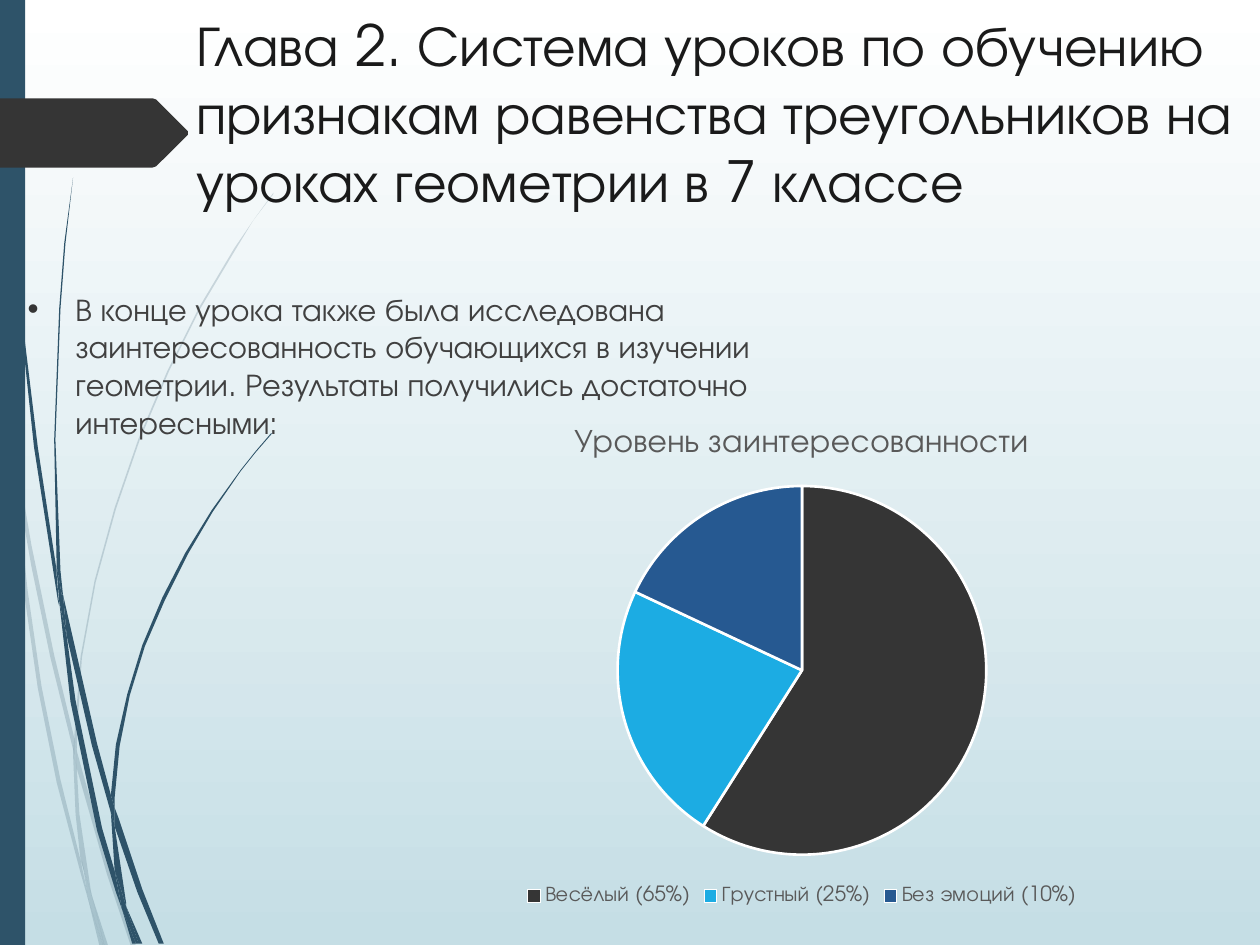
from dataclasses import dataclass

from lxml.etree import SubElement
from pptx import Presentation
from pptx.chart.data import CategoryChartData
from pptx.dml.color import RGBColor
from pptx.enum.chart import XL_CHART_TYPE, XL_LEGEND_POSITION
from pptx.enum.shapes import MSO_SHAPE
from pptx.enum.text import MSO_ANCHOR, PP_ALIGN
from pptx.oxml.ns import qn
from pptx.util import Inches, Pt


@dataclass(frozen=True)
class Theme:
    """Colours and type sizes of the slide."""

    font: str = "TeX Gyre Adventor"
    white: str = "FFFFFF"
    mist: str = "C5DEE5"
    teal: str = "2E5369"
    charcoal: str = "353535"
    title_ink: str = "1A1A1A"
    body_ink: str = "404040"
    chart_ink: str = "595959"
    slices: tuple = ("353535", "1CACE3", "265991")
    title_size: float = 32.4
    body_size: float = 18
    chart_title_size: float = 18.6
    legend_size: float = 12


THEME = Theme()

FAINT_STRANDS = [
    [(.08, 3.5), (.06, 3.22), (0, 2.82), (0, 2.99), (.07, 3.44)],
    [(.4, 5.22), (.59, 5.99), (.59, 5.86), (.43, 5.2), (.25, 4.33), (.1, 3.45), (.12, 3.76), (.25, 4.5)],
    [(.64, 6.07), (.61, 5.96), (.61, 6.1), (.85, 6.94), (1.04, 7.51), (1.08, 7.51), (.88, 6.92)],
    [(.83, 7.51), (.86, 7.51), (.73, 7.11)],
    [(.64, 6.83), (.48, 6.19), (.33, 5.45), (.22, 4.69), (.12, 3.76), (.08, 3.5), (.19, 4.7),
     (.3, 5.46), (.45, 6.21), (.64, 6.93), (.7, 7.14), (.69, 7.07)],
    [(.58, 5.99), (.6, 6.46), (.64, 6.83), (.67, 6.92), (.73, 7.11), (.72, 7.06), (.63, 6.46),
     (.61, 6.1), (.61, 6.08)],
    [(.61, 5.84), (.65, 5.22), (.76, 4.62), (.92, 4.04), (1.11, 3.49), (1.34, 2.95), (1.59, 2.45),
     (1.87, 1.98), (2.01, 1.75), (2.17, 1.54), (2.17, 1.53), (2.01, 1.75), (1.86, 1.97),
     (1.58, 2.44), (1.33, 2.94), (1.1, 3.48), (.91, 4.03), (.75, 4.61), (.64, 5.21), (.59, 5.84),
     (.59, 5.86), (.61, 5.96)],
    [(.7, 7.14), (.79, 7.51), (.82, 7.51)],
    [(.61, 6.08), (.61, 6.1), (.61, 5.96), (.59, 5.86), (.58, 5.99)],
    [(.67, 6.92), (.65, 6.83), (.69, 7.07), (.7, 7.14), (.82, 7.51), (.83, 7.51), (.73, 7.11)],
]

STRONG_STRANDS = [
    [(.05, 1.1), (.14, 2.33), (.27, 3.55), (.46, 4.77), (.47, 4.81), (.45, 4.57), (.45, 4.53),
     (.3, 3.55), (.15, 2.32), (.06, 1.09), (.04, .48), (.03, 0), (.02, 0), (.03, .48)],
    [(.73, 5.92), (.88, 6.45), (.88, 6.33), (.88, 6.31), (.77, 5.9), (.5, 4.72), (.53, 5.05)],
    [(.94, 6.49), (.91, 6.41), (.91, 6.56), (1.09, 7.08), (1.26, 7.49), (1.3, 7.49), (1.13, 7.06)],
    [(.91, 6.91), (.81, 6.57), (.6, 5.56), (.53, 5.05), (.47, 4.77), (.56, 5.57), (.77, 6.59),
     (.92, 7.08), (.97, 7.22), (.96, 7.17)],
    [(.5, 4.72), (.48, 4.53), (.44, 3.49), (.48, 2.45), (.52, 1.93), (.58, 1.41), (.51, 1.93),
     (.47, 2.45), (.43, 3.49), (.45, 4.49), (.49, 4.72)],
    [(1.1, 7.49), (1.13, 7.49), (1, 7.19)],
    [(.47, 4.77), (.53, 5.05), (.5, 4.72), (.49, 4.72), (.45, 4.49), (.45, 4.53)],
    [(.91, 6.33), (.95, 5.92), (1.03, 5.52), (1.15, 5.13), (1.31, 4.76), (1.49, 4.4), (1.69, 4.06),
     (1.91, 3.74), (2.03, 3.59), (2.16, 3.44), (2.15, 3.44), (2.03, 3.58), (1.91, 3.73),
     (1.68, 4.05), (1.47, 4.39), (1.29, 4.74), (1.13, 5.12), (1.01, 5.51), (.92, 5.91),
     (.88, 6.31), (.91, 6.41)],
    [(.97, 7.22), (1.05, 7.49), (1.08, 7.49)],
    [(.88, 6.45), (.91, 6.91), (.96, 7.06), (1, 7.19), (1, 7.16), (.91, 6.56), (.9, 6.51)],
    [(.88, 6.45), (.9, 6.51), (.91, 6.56), (.91, 6.41), (.88, 6.31), (.88, 6.33)],
    [(.96, 7.06), (.91, 6.91), (.96, 7.17), (.97, 7.22), (1.08, 7.49), (1.1, 7.49), (1, 7.19)],
]

ARROW_OUTLINE = [(0, 0), (1.21, 0), (1.24, .01), (1.49, .26), (1.49, .29), (1.24, .54),
                 (1.21, .55), (0, .55)]


def color(value):
    """Turn a hex string into a colour."""
    return RGBColor.from_string(value)


def style_font(font, size, ink):
    """Set the theme typeface, a size and a colour on a font."""
    font.name = THEME.font
    font.size = Pt(size)
    font.bold = False
    font.color.rgb = color(ink)


def paint(shape, fill, opacity=100):
    """Give a shape a flat fill without outline or shadow."""
    shape.shadow.inherit = False
    shape.line.fill.background()
    shape.fill.solid()
    shape.fill.fore_color.rgb = color(fill)
    if opacity < 100:
        tint = shape._element.spPr.find(qn("a:solidFill")).find(qn("a:srgbClr"))
        SubElement(tint, qn("a:alpha")).set("val", str(opacity * 1000))


def add_outline(shapes, left, top, points, fill, opacity=100):
    """Draw a closed outline whose points count in inches from a corner."""
    start, *rest = [(left + Inches(x), top + Inches(y)) for x, y in points]
    builder = shapes.build_freeform(*start)
    builder.add_line_segments(rest, close=True)
    paint(builder.convert_to_shape(), fill, opacity)


def add_background(slide):
    """Fill the slide with a gradient from white down to mist."""
    fill = slide.background.fill
    fill.gradient()
    fill.gradient_angle = 270
    for stop, position, value in zip(fill.gradient_stops, (0, 1), (THEME.white, THEME.mist)):
        stop.position = position
        stop.color.rgb = color(value)


def add_side_decoration(slide, left, top, width, height):
    """Place the grass strands, the side bar and the arrow tab."""
    for strands, opacity in ((FAINT_STRANDS, 20), (STRONG_STRANDS, 100)):
        group = slide.shapes.add_group_shape()
        for points in strands:
            add_outline(group.shapes, left, top, points, THEME.teal, opacity)
    bar = slide.shapes.add_shape(MSO_SHAPE.RECTANGLE, left, top, width, height)
    paint(bar, THEME.teal)
    add_outline(slide.shapes, left, top + Inches(0.78), ARROW_OUTLINE, THEME.charcoal)


def add_text(slide, left, top, width, height, text, size, ink):
    """Place a wrapped paragraph at the top of its box and return it."""
    frame = slide.shapes.add_textbox(left, top, width, height).text_frame
    frame.word_wrap = True
    frame.vertical_anchor = MSO_ANCHOR.TOP
    paragraph = frame.paragraphs[0]
    paragraph.text = text
    paragraph.alignment = PP_ALIGN.LEFT
    style_font(paragraph.font, size, ink)
    return paragraph


def add_bullet(paragraph):
    """Give a paragraph a hanging bullet."""
    paragraph.space_before = Pt(10)
    properties = paragraph._p.get_or_add_pPr()
    properties.set("marL", str(Inches(0.38)))
    properties.set("indent", str(-Inches(0.38)))
    bullet_color = SubElement(properties, qn("a:buClr"))
    SubElement(bullet_color, qn("a:srgbClr")).set("val", THEME.charcoal)
    SubElement(properties, qn("a:buFont")).set("typeface", "Arial")
    SubElement(properties, qn("a:buChar")).set("char", "•")


def add_interest_chart(slide, left, top, width, height):
    """Place the pie chart of pupils' interest."""
    title = "Уровень заинтересованности"
    data = CategoryChartData()
    data.categories = ["Весёлый (65%)", "Грустный (25%)", "Без эмоций (10%)"]
    data.add_series(title, (59, 23, 18))
    chart = slide.shapes.add_chart(XL_CHART_TYPE.PIE, left, top, width, height, data).chart
    chart.font.name = THEME.font
    chart.has_title = True
    chart.chart_title.include_in_layout = False
    heading = chart.chart_title.text_frame.paragraphs[0]
    heading.text = title
    style_font(heading.font, THEME.chart_title_size, THEME.chart_ink)
    chart.has_legend = True
    chart.legend.position = XL_LEGEND_POSITION.BOTTOM
    chart.legend.include_in_layout = False
    style_font(chart.legend.font, THEME.legend_size, THEME.chart_ink)
    plot = chart.plots[0]
    plot.vary_by_categories = True
    for index, value in enumerate(THEME.slices):
        slice_format = plot.series[0].points[index].format
        slice_format.fill.solid()
        slice_format.fill.fore_color.rgb = color(value)
        slice_format.line.color.rgb = color(THEME.white)
        slice_format.line.width = Pt(1.5)


def main():
    """Build the slide and save it."""
    presentation = Presentation()
    presentation.slide_width, presentation.slide_height = Inches(10), Inches(7.5)
    slide = presentation.slides.add_slide(presentation.slide_layouts[6])
    add_background(slide)
    add_side_decoration(slide, Inches(0), Inches(0), Inches(0.2), Inches(7.5))
    add_text(slide, Inches(1.46), Inches(0.03), Inches(8.54), Inches(1.4),
             "Глава 2. Система уроков по обучению признакам равенства треугольников "
             "на уроках геометрии в 7 классе", THEME.title_size, THEME.title_ink)
    add_bullet(add_text(slide, Inches(0.12), Inches(2.25), Inches(7.21), Inches(4.13),
                        "В конце урока также была исследована заинтересованность обучающихся "
                        "в изучении геометрии. Результаты получились достаточно интересными:",
                        THEME.body_size, THEME.body_ink))
    add_interest_chart(slide, Inches(3.03), Inches(3.19), Inches(6.67), Inches(4.04))
    presentation.save("out.pptx")


if __name__ == "__main__":
    main()
